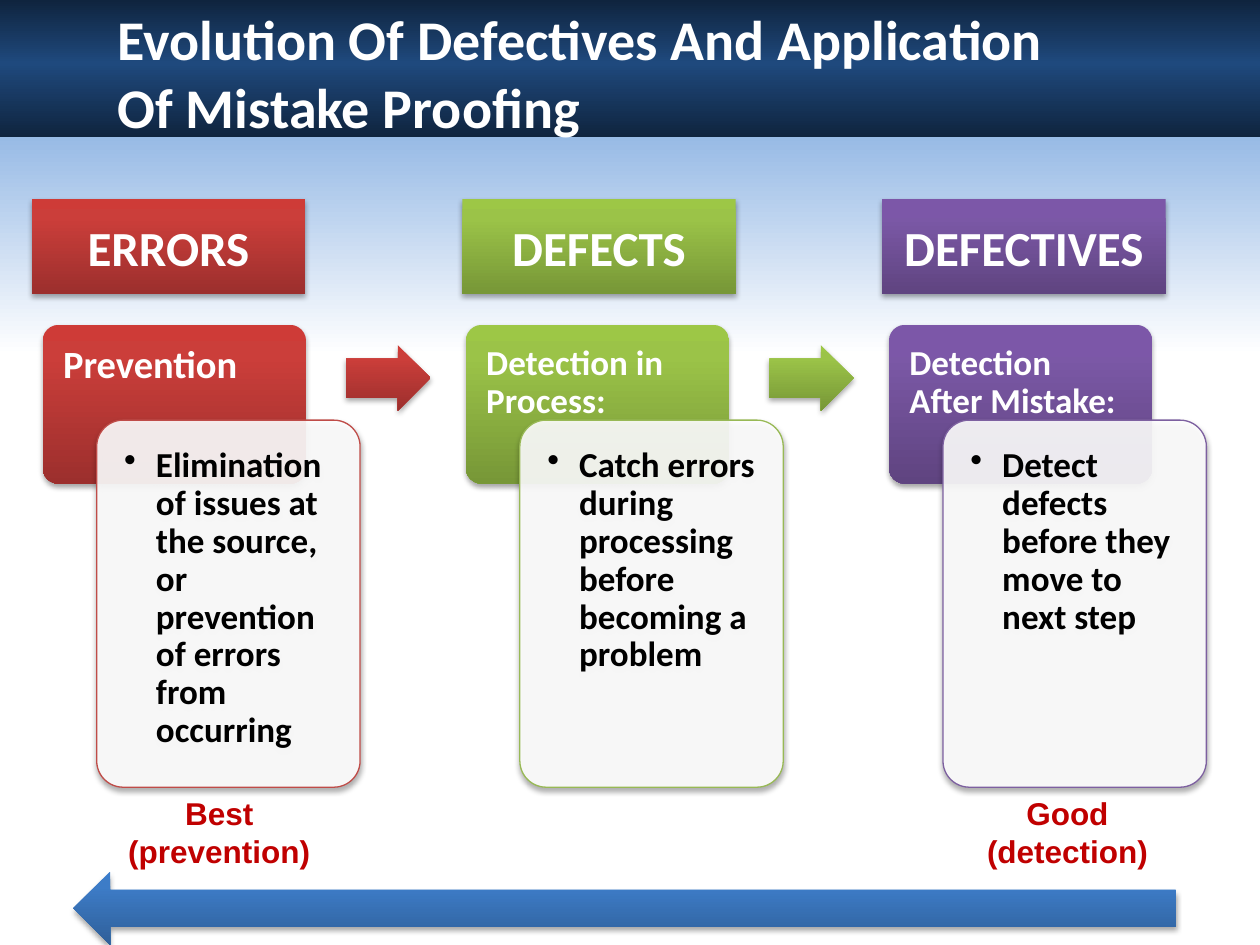
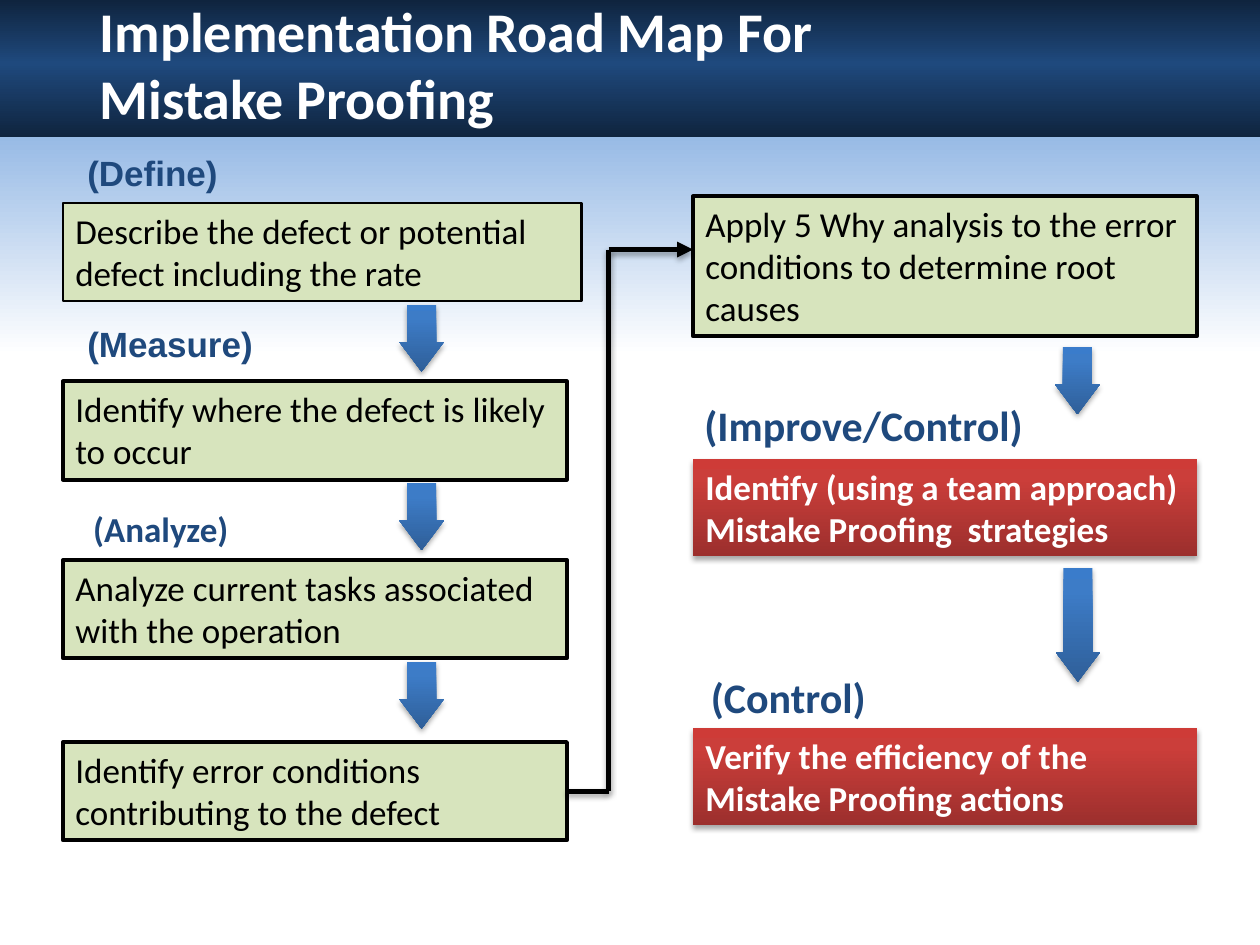
from dataclasses import dataclass
from typing import NamedTuple

from lxml import etree
from pptx import Presentation
from pptx.dml.color import RGBColor
from pptx.enum.shapes import MSO_CONNECTOR, MSO_SHAPE
from pptx.enum.text import MSO_ANCHOR, PP_ALIGN
from pptx.oxml.ns import qn
from pptx.util import Cm, Pt

RECT, ROUNDED = MSO_SHAPE.RECTANGLE, MSO_SHAPE.ROUNDED_RECTANGLE
ARROW_LEFT, ARROW_RIGHT, ARROW_DOWN = MSO_SHAPE.LEFT_ARROW, MSO_SHAPE.RIGHT_ARROW, MSO_SHAPE.DOWN_ARROW
STRAIGHT = MSO_CONNECTOR.STRAIGHT
TOP, MIDDLE = MSO_ANCHOR.TOP, MSO_ANCHOR.MIDDLE
LEFT, CENTER = PP_ALIGN.LEFT, PP_ALIGN.CENTER
RIGHT_SIDE = 3

Gradient = tuple[tuple[int, str], ...]  # (percent from the top, colour)


@dataclass(frozen=True)
class Theme:
    white: str = "FFFFFF"
    black: str = "000000"
    navy: str = "1F497D"
    note: str = "C00000"
    step: str = "D7E4BD"
    red: Gradient = ((0, "CE3B37"), (20, "CB3E3A"), (100, "9C2F2D"))
    green: Gradient = ((0, "9DC746"), (20, "9BC348"), (100, "779737"))
    purple: Gradient = ((0, "7C57A8"), (20, "7B58A6"), (100, "5F4480"))
    blue: Gradient = ((0, "3A7CCB"), (20, "3D7CC7"), (100, "2F5F99"))
    band: Gradient = ((0, "0F243E"), (46, "1F497D"), (100, "0F243E"))
    sky: Gradient = ((0, "8EB4E3"), (29, "FFFFFF"), (100, "FFFFFF"))
    heading_font: str = "Calibri"
    note_font: str = "Arial"
    title: int = 32
    banner: int = 28
    label: int = 24
    lead: int = 22
    body: int = 20
    note_size: int = 18


THEME = Theme()


class Area(NamedTuple):
    """Left, top, width and height in centimetres."""
    left: float
    top: float
    width: float
    height: float

    def lengths(self) -> list:
        return [Cm(value) for value in self]


class Style(NamedTuple):
    size: int
    color: str
    bold: bool = True
    font: str = THEME.heading_font
    align: int = LEFT
    anchor: int = TOP
    spacing: float = 1.0
    insets: tuple = (0.25, 0.13, 0.25, 0.13)
    wrap: bool = True


class Stage(NamedTuple):
    banner: str
    banner_left: float
    banner_width: float
    heading: str
    heading_size: int
    detail: str
    fill: Gradient
    outline: str


class Step(NamedTuple):
    text: str
    area: Area
    outline: float = 2.25


class Label(NamedTuple):
    text: str
    area: Area
    size: int
    font: str = THEME.heading_font


STAGES = (
    Stage("ERRORS", 0.64, 5.51, "Prevention", THEME.lead,
          "Elimination of issues at the source, or prevention of errors from occurring",
          THEME.red, "BF4C48"),
    Stage("DEFECTS", 9.32, 5.51, "Detection in Process:", THEME.body,
          "Catch errors during processing before becoming a problem",
          THEME.green, "98B955"),
    Stage("DEFECTIVES", 17.78, 5.72, "Detection After Mistake:", THEME.body,
          "Detect defects before they move to next step",
          THEME.purple, "7D60A0"),
)
STAGE_LEFT, STAGE_PITCH = 0.86, 8.53
NOTES = (("Good\n(detection)", 19.13), ("Best\n(prevention)", 2.03))

STEP_LEFT, STEP_TOP, STEP_PITCH = 1.27, 4.09, 3.6
RIGHT_LEFT, COLUMN_WIDTH, STEP_HEIGHT = 13.97, 10.16, 1.98
STEPS = (
    Step("Apply 5 Why analysis to the error conditions to determine root causes",
         Area(RIGHT_LEFT, 3.96, COLUMN_WIDTH, 2.82)),
    Step("Describe the defect or potential defect including the rate",
         Area(STEP_LEFT, STEP_TOP, 10.46, STEP_HEIGHT), 1.5),
    Step("Identify where the defect is likely to occur",
         Area(STEP_LEFT, STEP_TOP + STEP_PITCH, COLUMN_WIDTH, STEP_HEIGHT)),
    Step("Analyze current tasks associated with the operation",
         Area(STEP_LEFT, STEP_TOP + 2 * STEP_PITCH, COLUMN_WIDTH, STEP_HEIGHT)),
    Step("Identify error conditions contributing to the defect",
         Area(STEP_LEFT, 14.96, COLUMN_WIDTH, STEP_HEIGHT)),
)
ACTIONS = (
    ("Identify (using a team approach) Mistake Proofing  strategies", 9.25),
    ("Verify the efficiency of the Mistake Proofing actions", 14.68),
)
LABELS = (
    Label("(Define)", Area(1.76, 3.05, 2.64, 0.87), THEME.body, THEME.note_font),
    Label("(Measure)", Area(1.76, 6.5, 3.36, 0.87), THEME.body, THEME.note_font),
    Label("(Analyze)", Area(1.88, 10.24, 2.75, 0.87), THEME.body),
    Label("(Improve/Control)", Area(14.2, 8.05, 6.48, 1.02), THEME.label),
    Label("(Control)", Area(14.33, 13.54, 3.15, 1.02), THEME.label),
)
DOWN_ARROWS = (
    *(Area(8.05, 6.14 + STEP_PITCH * row, 0.9, 1.35) for row in range(3)),
    Area(21.27, 7.0, 0.9, 1.35),
    Area(21.28, 11.45, 0.9, 2.29),
)


def child(parent, tag: str, **attributes):
    return etree.SubElement(parent, qn(tag), attributes)


def paint(shape, fill: str | Gradient) -> None:
    """Fill with one colour, or with a gradient running from top to bottom."""
    if isinstance(fill, str):
        shape.fill.solid()
        shape.fill.fore_color.rgb = RGBColor.from_string(fill)
        return
    shape.fill.gradient()
    shape.fill.gradient_angle = 270
    stops = shape.element.spPr.find(".//" + qn("a:gsLst"))
    stops.clear()
    for percent, color in fill:
        stop = child(stops, "a:gs", pos=str(percent * 1000))
        child(stop, "a:srgbClr", val=color)


def set_line(line, color: str, width: float) -> None:
    line.color.rgb = RGBColor.from_string(color)
    line.width = Pt(width)


def add_shadow(effects) -> None:
    shadow = child(effects, "a:outerShdw", blurRad="40000", dist="23000",
                   dir="5400000", rotWithShape="0")
    color = child(shadow, "a:srgbClr", val=THEME.black)
    child(color, "a:alpha", val="35000")


def write(shape, text: str, style: Style) -> None:
    frame = shape.text_frame
    frame.text = text
    left, top, right, bottom = (Cm(inset) for inset in style.insets)
    frame_format = {"margin_left": left, "margin_top": top, "margin_right": right,
                    "margin_bottom": bottom, "word_wrap": style.wrap,
                    "vertical_anchor": style.anchor}
    for name, value in frame_format.items():
        setattr(frame, name, value)
    font_format = {"name": style.font, "size": Pt(style.size), "bold": style.bold}
    for para in frame.paragraphs:
        para.alignment = style.align
        para.line_spacing = style.spacing
        for span in para.runs:
            for name, value in font_format.items():
                setattr(span.font, name, value)
            span.font.color.rgb = RGBColor.from_string(style.color)


def add_text(page, area: Area, text: str, style: Style) -> None:
    write(page.shapes.add_textbox(*area.lengths()), text, style)


def add_box(page, kind, area: Area, fill: str | Gradient, outline: str = "",
            width: float = 0.75, shadow: bool = True, adjust: tuple = ()):
    box = page.shapes.add_shape(kind, *area.lengths())
    for index, value in enumerate(adjust):
        box.adjustments[index] = value
    paint(box, fill)
    if outline:
        set_line(box.line, outline, width)
    else:
        box.line.fill.background()
    box.shadow.inherit = False
    if shadow:
        add_shadow(box.element.spPr.find(qn("a:effectLst")))
    return box


def add_segment(page, start: tuple, end: tuple, arrow: bool = False):
    segment = page.shapes.add_connector(STRAIGHT, *start, *end)
    set_line(segment.line, THEME.black, 3)
    if arrow:
        child(segment.line._get_or_add_ln(), "a:tailEnd", type="triangle")
    add_shadow(child(segment.element.spPr, "a:effectLst"))
    return segment


def add_page(deck, title: str, title_area: Area):
    page = deck.slides.add_slide(deck.slide_layouts[6])
    add_box(page, RECT, Area(0, 2.34, 25.4, 16.61), THEME.sky, shadow=False)
    add_box(page, RECT, Area(0, 0, 25.4, 2.77), THEME.band, shadow=False)
    add_text(page, title_area, title, Style(THEME.title, THEME.white))
    return page


def add_stage(page, stage: Stage, left: float) -> None:
    heading = add_box(page, ROUNDED, Area(left, 6.55, 5.31, 3.2), stage.fill, adjust=(0.1,))
    write(heading, stage.heading, Style(stage.heading_size, THEME.white, spacing=0.9,
                                        insets=(0.32, 0.32, 0.32, 1.19)))
    card = add_box(page, ROUNDED, Area(left + 1.09, 8.47, 5.31, 7.4), THEME.white,
                   stage.outline, adjust=(0.1,))
    child(card.element.spPr.find(qn("a:solidFill"))[0], "a:alpha", val="90000")
    write(card, stage.detail, Style(THEME.body, THEME.black, spacing=0.9, insets=(0.4,) * 4))
    bullet = card.text_frame.paragraphs[0]._p.get_or_add_pPr()
    bullet.set("marL", str(Cm(0.64)))
    bullet.set("indent", str(-Cm(0.64)))
    child(bullet, "a:buChar", char="•")
    banner = add_box(page, RECT, Area(stage.banner_left, 4.02, stage.banner_width, 1.9), stage.fill)
    write(banner, stage.banner, Style(THEME.banner, THEME.white, align=CENTER, anchor=MIDDLE))


def build_evolution(deck) -> None:
    page = add_page(deck, "Evolution Of Defectives And Application\vOf Mistake Proofing",
                    Area(2.12, -0.03, 22.8, 3))
    for index, stage in enumerate(STAGES):
        left = STAGE_LEFT + STAGE_PITCH * index
        add_stage(page, stage, left)
        if index < len(STAGES) - 1:
            add_box(page, ARROW_RIGHT, Area(left + 6.12, 6.96, 1.7, 1.32), stage.fill,
                    adjust=(0.6, 0.5))
    add_box(page, ARROW_LEFT, Area(1.48, 17.57, 22.22, 1.48), THEME.blue)
    note_style = Style(THEME.note_size, THEME.note, font=THEME.note_font, align=CENTER)
    for text, left in NOTES:
        add_text(page, Area(left, 15.88, 4.78, 1.79), text, note_style)


def build_road_map(deck) -> None:
    page = add_page(deck, "Implementation Road Map For\vMistake Proofing",
                    Area(1.76, -0.2, 21.82, 3))
    for step in STEPS:
        last_step = add_box(page, RECT, step.area, THEME.step, THEME.black, step.outline,
                            shadow=False)
        write(last_step, step.text, Style(THEME.body, THEME.black, bold=False))
    for text, top in ACTIONS:
        action = add_box(page, RECT, Area(RIGHT_LEFT, top, COLUMN_WIDTH, 1.96), THEME.red)
        write(action, text, Style(THEME.body, THEME.white))

    start = (last_step.left + last_step.width, last_step.top + last_step.height // 2)
    lower, upper = (Cm(12.27), start[1]), (Cm(12.27), Cm(5.03))
    add_segment(page, start, lower).begin_connect(last_step, RIGHT_SIDE)
    add_segment(page, lower, upper)
    add_segment(page, upper, (Cm(RIGHT_LEFT), upper[1]), arrow=True)

    for label in LABELS:
        add_text(page, label.area, label.text,
                 Style(label.size, THEME.navy, font=label.font, insets=(0,) * 4, wrap=False))
    for area in DOWN_ARROWS:
        add_box(page, ARROW_DOWN, area, THEME.blue, adjust=(0.65, 0.66))


def main() -> None:
    deck = Presentation()
    deck.slide_width, deck.slide_height = Cm(25.4), Cm(19.05)
    build_evolution(deck)
    build_road_map(deck)
    deck.save("out.pptx")


if __name__ == "__main__":
    main()
